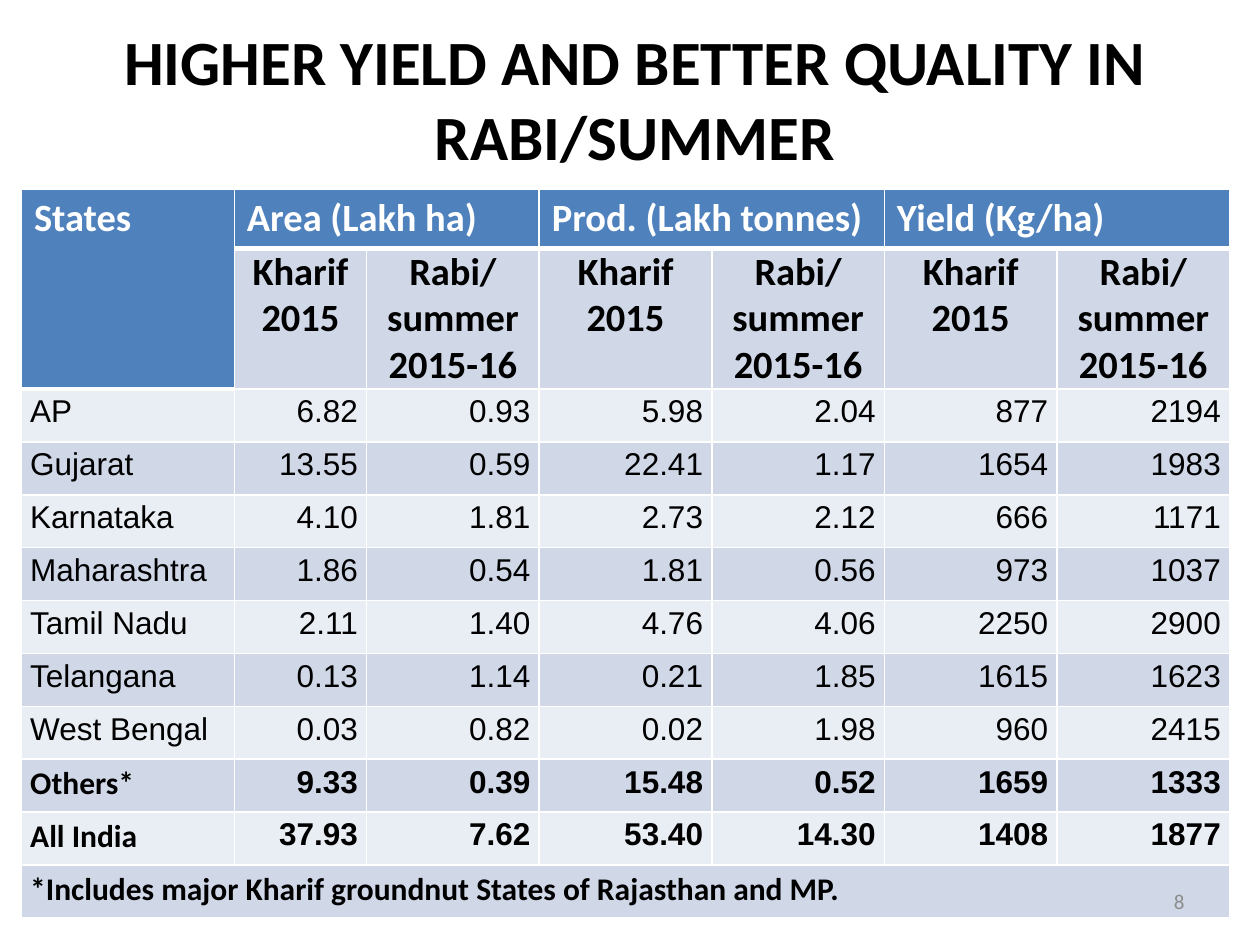
"""Build a slide comparing groundnut yields by state and season."""
from dataclasses import dataclass

from lxml import etree
from pptx import Presentation
from pptx import util as u
from pptx.dml.color import RGBColor
from pptx.enum import text
from pptx.oxml import ns


@dataclass(frozen=True)
class Theme:
    head: str = "4F81BD"
    dark: str = "D0D8E8"
    light: str = "E9EDF4"
    white: str = "FFFFFF"
    black: str = "000000"
    grey: str = "8C8C8C"
    sans: str = "Calibri"
    data: str = "Arial"
    title: int = 36
    label: int = 22
    body: int = 18
    small: int = 12


THEME = Theme()
LEFT, CENTER, RIGHT = text.PP_ALIGN.LEFT, text.PP_ALIGN.CENTER, text.PP_ALIGN.RIGHT
WIDTHS = [1.69, 1.05] + [1.37] * 5
HEIGHTS = [0.46, 1.11] + [0.42] * 10
GROUPS = ["Area (Lakh ha)", "Prod. (Lakh tonnes)", "Yield (Kg/ha)"]
SEASONS = [("Kharif 2015", -0.06), ("Rabi/ summer 2015-16", -0.04)]
STATES = [
    ("AP", "6.82", "0.93", "5.98", "2.04", "877", "2194"),
    ("Gujarat", "13.55", "0.59", "22.41", "1.17", "1654", "1983"),
    ("Karnataka", "4.10", "1.81", "2.73", "2.12", "666", "1171"),
    ("Maharashtra", "1.86", "0.54", "1.81", "0.56", "973", "1037"),
    ("Tamil Nadu", "2.11", "1.40", "4.76", "4.06", "2250", "2900"),
    ("Telangana", "0.13", "1.14", "0.21", "1.85", "1615", "1623"),
    ("West Bengal", "0.03", "0.82", "0.02", "1.98", "960", "2415"),
]
TOTALS = [
    ("Others*", "9.33", "0.39", "15.48", "0.52", "1659", "1333"),
    ("All India", "37.93", "7.62", "53.40", "14.30", "1408", "1877"),
]
NOTE = "*Includes major Kharif groundnut States of Rajasthan and MP."


def write(frame, words, size, color, align=LEFT, bold=False, font=THEME.sans):
    """Set one formatted paragraph and return it."""
    frame.text = words
    para = frame.paragraphs[0]
    para.alignment = align
    for run in para.runs:
        run.font.size, run.font.name, run.font.bold = u.Pt(size), font, bold
        run.font.color.rgb = RGBColor.from_string(color)
    return para


def edge(cell, side, width):
    """Draw a white border on one side of a cell."""
    line = etree.SubElement(cell._tc.get_or_add_tcPr(), ns.qn(f"a:ln{side}"), w=str(u.Pt(width)))
    fill = etree.SubElement(line, ns.qn("a:solidFill"))
    etree.SubElement(fill, ns.qn("a:srgbClr"), val=THEME.white)


def paint(cell, row, col):
    """Give a cell its borders and banded fill."""
    for side in "LRTB":
        thick = (row, side) in ((0, "B"), (1, "T")) and not (row == 1 and col == 0)
        edge(cell, side, 3 if thick else 1)
    color = THEME.head if row == 0 else THEME.dark if row % 2 else THEME.light
    cell.fill.solid()
    cell.fill.fore_color.rgb = RGBColor.from_string(color)


def inset(cell):
    """Set the tight margins used below the group headings."""
    cell.margin_left = cell.margin_right = u.Inches(0.07)
    cell.margin_top = cell.margin_bottom = 0


def heads(table):
    """Fill the two heading rows."""
    table.cell(0, 0).merge(table.cell(1, 0))
    write(table.cell(0, 0).text_frame, "States", THEME.label, THEME.white, bold=True)
    for num, group in enumerate(GROUPS):
        col = 1 + 2 * num
        table.cell(0, col).merge(table.cell(0, col + 1))
        write(table.cell(0, col).text_frame, group, THEME.label, THEME.white, bold=True)
        for step, (season, indent) in enumerate(SEASONS):
            cell = table.cell(1, col + step)
            inset(cell)
            para = write(cell.text_frame, season, THEME.label, THEME.black, CENTER, True)
            para._p.get_or_add_pPr().set("indent", str(u.Inches(indent)))


def entry(cell, words, align, bold, font):
    """Fill one body cell."""
    inset(cell)
    para = write(cell.text_frame, words, THEME.body, THEME.black, align, bold, font)
    para.line_spacing = 1.15


def body(table):
    """Fill the state rows, the totals and the footnote."""
    for row, values in enumerate(STATES + TOTALS, 2):
        bold = values in TOTALS
        for col, value in enumerate(values):
            font = THEME.sans if bold and col == 0 else THEME.data
            entry(table.cell(row, col), value, RIGHT if col else LEFT, bold, font)
    last = len(HEIGHTS) - 1
    table.cell(last, 0).merge(table.cell(last, len(WIDTHS) - 1))
    entry(table.cell(last, 0), NOTE, LEFT, True, THEME.sans)


def add_grid(slide):
    """Add the table of area, production and yield."""
    tall = u.Inches(5.81)
    frame = slide.shapes.add_table(len(HEIGHTS), len(WIDTHS), u.Inches(0.17),
                                   u.Inches(1.5), u.Inches(9.58), tall)
    table = frame.table
    for col, width in zip(table.columns, WIDTHS):
        col.width = u.Inches(width)
    for num, (row, height) in enumerate(zip(table.rows, HEIGHTS)):
        row.height = u.Inches(height)
        for col, cell in enumerate(row.cells):
            paint(cell, num, col)
    frame.height = tall
    heads(table)
    body(table)


def add_title(slide):
    """Place and format the title."""
    title = slide.shapes.title
    title.left, title.top = u.Inches(0.25), u.Inches(0.3)
    title.width, title.height = u.Inches(9.58), u.Inches(0.95)
    frame = title.text_frame
    frame.auto_size = text.MSO_AUTO_SIZE.NONE
    frame.vertical_anchor = text.MSO_ANCHOR.MIDDLE
    write(frame, "HIGHER YIELD AND BETTER QUALITY IN RABI/SUMMER",
          THEME.title, THEME.black, CENTER, True)


def add_page(slide):
    """Add the page number."""
    box = slide.shapes.add_textbox(u.Inches(7.17), u.Inches(6.95), u.Inches(2.33), u.Inches(0.4))
    box.text_frame.word_wrap = True
    box.text_frame.vertical_anchor = text.MSO_ANCHOR.MIDDLE
    write(box.text_frame, "8", THEME.small, THEME.grey, RIGHT)


def main():
    """Build and save the slide."""
    deck = Presentation()
    deck.slide_width, deck.slide_height = u.Inches(10), u.Inches(7.5)
    slide = deck.slides.add_slide(deck.slide_layouts[5])
    add_title(slide)
    add_grid(slide)
    add_page(slide)
    deck.save("out.pptx")


if __name__ == "__main__":
    main()
